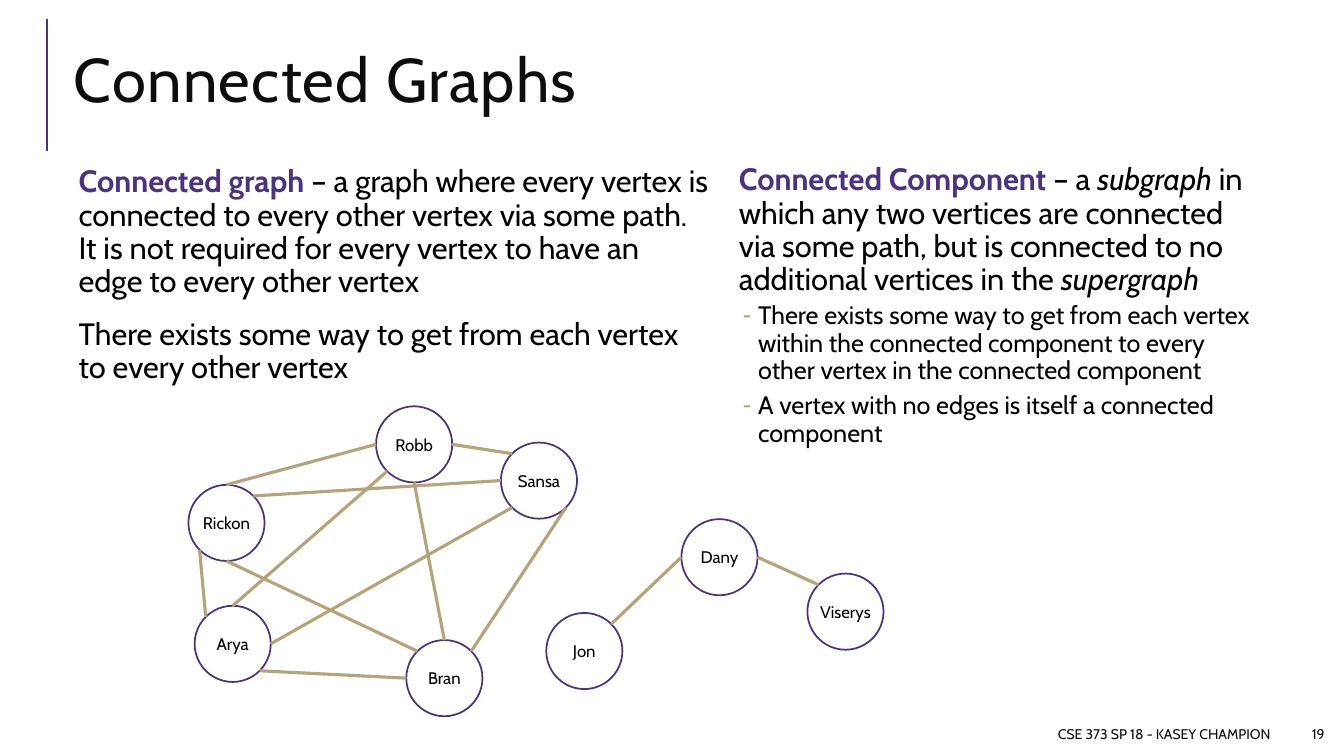
from dataclasses import dataclass
from math import cos, radians, sin

from lxml import etree
from pptx import Presentation
from pptx import util as u
from pptx.dml.color import RGBColor
from pptx.enum import shapes, text
from pptx.oxml import ns


@dataclass(frozen=True)
class Theme:
    """Colours, font and type sizes of the slide."""
    font: str = "Cabin"
    purple: str = "4C3282"
    gold: str = "B6A479"
    ink: str = "0D0D0D"
    black: str = "000000"
    title: int = 44
    body: int = 22
    sub: int = 18
    label: int = 12
    foot: int = 10


THEME = Theme()
LEFT = (
    (0, (("Connected graph ", "key"),
         ("– a graph where every vertex is connected to every other vertex via some path. "
          "It is not required for every vertex to have an edge to every other vertex", ""))),
    (0, (("There exists some way to get from each vertex to every other vertex", ""),)),
)
RIGHT = (
    (0, (("Connected Component ", "key"), ("– a ", ""), ("subgraph", "slant"),
         (" in which any two vertices are connected via some path, "
          "but is connected to no additional vertices in the ", ""),
         ("supergraph", "slant"))),
    (1, (("There exists some way to get from each vertex within the connected component "
          "to every other vertex in the connected component", ""),)),
    (1, (("A vertex with no edges is itself a connected component", ""),)),
)
SIZE = 54.4
NODES = {
    "Sansa": (223.2, 25.9), "Robb": (134, 0), "Bran": (155.6, 167),
    "Arya": (4.4, 142.5), "Rickon": (0, 56.1), "Jon": (255.6, 147.6),
    "Dany": (352.1, 80.6), "Viserys": (442.1, 119.5),
}
EDGES = (
    ("Rickon", "SW", "Arya", "NW"), ("Bran", "W", "Arya", "SE"),
    ("Robb", "E", "Sansa", "NW"), ("Sansa", "W", "Rickon", "NE"),
    ("Robb", "S", "Bran", "N"), ("Sansa", "SE", "Bran", "NE"),
    ("Rickon", "N", "Robb", "W"), ("Arya", "E", "Sansa", "SW"),
    ("Rickon", "S", "Bran", "NW"), ("Arya", "N", "Robb", "SW"),
    ("Dany", "W", "Jon", "NE"), ("Dany", "E", "Viserys", "NW"),
)
SIDES = ("E", "SE", "S", "SW", "W", "NW", "N", "NE")


def style(font, size, color):
    """Give a font the theme face, a size and a colour."""
    font.name = THEME.font
    font.size = u.Pt(size)
    font.color.rgb = RGBColor.from_string(color)


def place(shape, box):
    """Move a shape to a box of left, top, width and height."""
    shape.left, shape.top, shape.width, shape.height = map(u.Pt, box)


def line(slide, start, end, color, width):
    """Draw a straight line between two points."""
    points = map(u.Pt, (*start, *end))
    link = slide.shapes.add_connector(shapes.MSO_CONNECTOR.STRAIGHT, *points)
    link.line.color.rgb = RGBColor.from_string(color)
    link.line.width = u.Pt(width)
    etree.SubElement(link._element.spPr, ns.qn("a:effectLst"))


def mark(para, margin, indent, dash):
    """Set the indent of a paragraph and its dash, if any."""
    props = para._p.get_or_add_pPr()
    props.set("marL", str(u.Pt(margin)))
    props.set("indent", str(u.Pt(indent)))
    if dash:
        tint = etree.SubElement(props, ns.qn("a:buClr"))
        etree.SubElement(tint, ns.qn("a:srgbClr"), val=THEME.gold)
        etree.SubElement(props, ns.qn("a:buChar"), char="-")
    else:
        etree.SubElement(props, ns.qn("a:buNone"))


def title(slide, box, words):
    """Fill the title and draw the rule to its left."""
    left, top, _, height = box
    line(slide, (left - 11.5, top - 7.2), (left - 11.5, top + height + 7.2),
         THEME.purple, 1.5)
    shape = slide.shapes.title
    place(shape, box)
    frame = shape.text_frame
    frame.auto_size = text.MSO_AUTO_SIZE.NONE
    frame.vertical_anchor = text.MSO_ANCHOR.MIDDLE
    para = frame.paragraphs[0]
    para.alignment = text.PP_ALIGN.LEFT
    para.line_spacing = 0.8
    style(para.font, THEME.title, THEME.ink)
    run = para.add_run()
    run.text = words
    run._r.get_or_add_rPr().set("spc", "100")


def column(shape, box, items):
    """Fill a body placeholder with paragraphs and dashed points."""
    place(shape, box)
    frame = shape.text_frame
    frame.word_wrap = True
    frame.auto_size = text.MSO_AUTO_SIZE.NONE
    frame.vertical_anchor = text.MSO_ANCHOR.TOP
    frame.margin_left = frame.margin_right = u.Pt(3.6)
    frame.margin_top = frame.margin_bottom = u.Pt(3.6)
    for index, (level, runs) in enumerate(items):
        para = frame.add_paragraph() if index else frame.paragraphs[0]
        para.level = level
        para.line_spacing = 0.9
        para.space_before = u.Pt(2 if level else 12)
        para.space_after = u.Pt(4 if level else 2)
        if level:
            mark(para, 20.9, -10.8, True)
        else:
            mark(para, 7.2, 0, False)
        style(para.font, THEME.sub if level else THEME.body, THEME.black)
        for words, kind in runs:
            run = para.add_run()
            run.text = words
            if kind == "key":
                run.font.bold = True
                run.font.color.rgb = RGBColor.from_string(THEME.purple)
            elif kind == "slant":
                run.font.italic = True


def node(slide, box, name):
    """Draw one named vertex."""
    shape = slide.shapes.add_shape(shapes.MSO_SHAPE.OVAL, *map(u.Pt, box))
    shape.shadow.inherit = False
    shape.fill.background()
    shape.line.color.rgb = RGBColor.from_string(THEME.purple)
    shape.line.width = u.Pt(1.25)
    frame = shape.text_frame
    frame.word_wrap = False
    frame.margin_left = frame.margin_right = 0
    frame.vertical_anchor = text.MSO_ANCHOR.MIDDLE
    para = frame.paragraphs[0]
    para.text = name
    para.alignment = text.PP_ALIGN.CENTER
    style(para.font, THEME.label, THEME.black)


def graph(slide, origin):
    """Draw the vertices and the edges between points on their rims."""
    left, top = origin
    spots = {name: (left + x, top + y) for name, (x, y) in NODES.items()}

    def rim(name, side):
        """Find the point on the given side of a vertex."""
        angle = radians(45 * SIDES.index(side))
        x, y = spots[name]
        return x + SIZE / 2 * (1 + cos(angle)), y + SIZE / 2 * (1 + sin(angle))

    for name, spot in spots.items():
        node(slide, (*spot, SIZE, SIZE), name)
    for first, side, last, facing in EDGES:
        line(slide, rim(first, side), rim(last, facing), THEME.gold, 2.25)


def footer(slide, box, words):
    """Write one right-aligned footer text."""
    frame = slide.shapes.add_textbox(*map(u.Pt, box)).text_frame
    frame.word_wrap = True
    frame.vertical_anchor = text.MSO_ANCHOR.MIDDLE
    para = frame.paragraphs[0]
    para.text = words
    para.alignment = text.PP_ALIGN.RIGHT
    style(para.font, THEME.foot, THEME.ink)


def main():
    """Build and save the slide."""
    deck = Presentation()
    deck.slide_width, deck.slide_height = u.Pt(960), u.Pt(540)
    slide = deck.slides.add_slide(deck.slide_layouts[3])
    title(slide, (45.4, 20.9, 880.6, 79.9), "Connected Graphs")
    column(slide.placeholders[1], (45.4, 115.2, 464.4, 381.6), LEFT)
    column(slide.placeholders[2], (517, 113.8, 384.5, 381.6), RIGHT)
    graph(slide, (134.6, 290.2))
    footer(slide, (450, 513.4, 464.4, 21.6), "CSE 373 SP 18 - KASEY CHAMPION")
    footer(slide, (920.2, 513.4, 33.1, 21.6), "19")
    deck.save("out.pptx")


if __name__ == "__main__":
    main()
